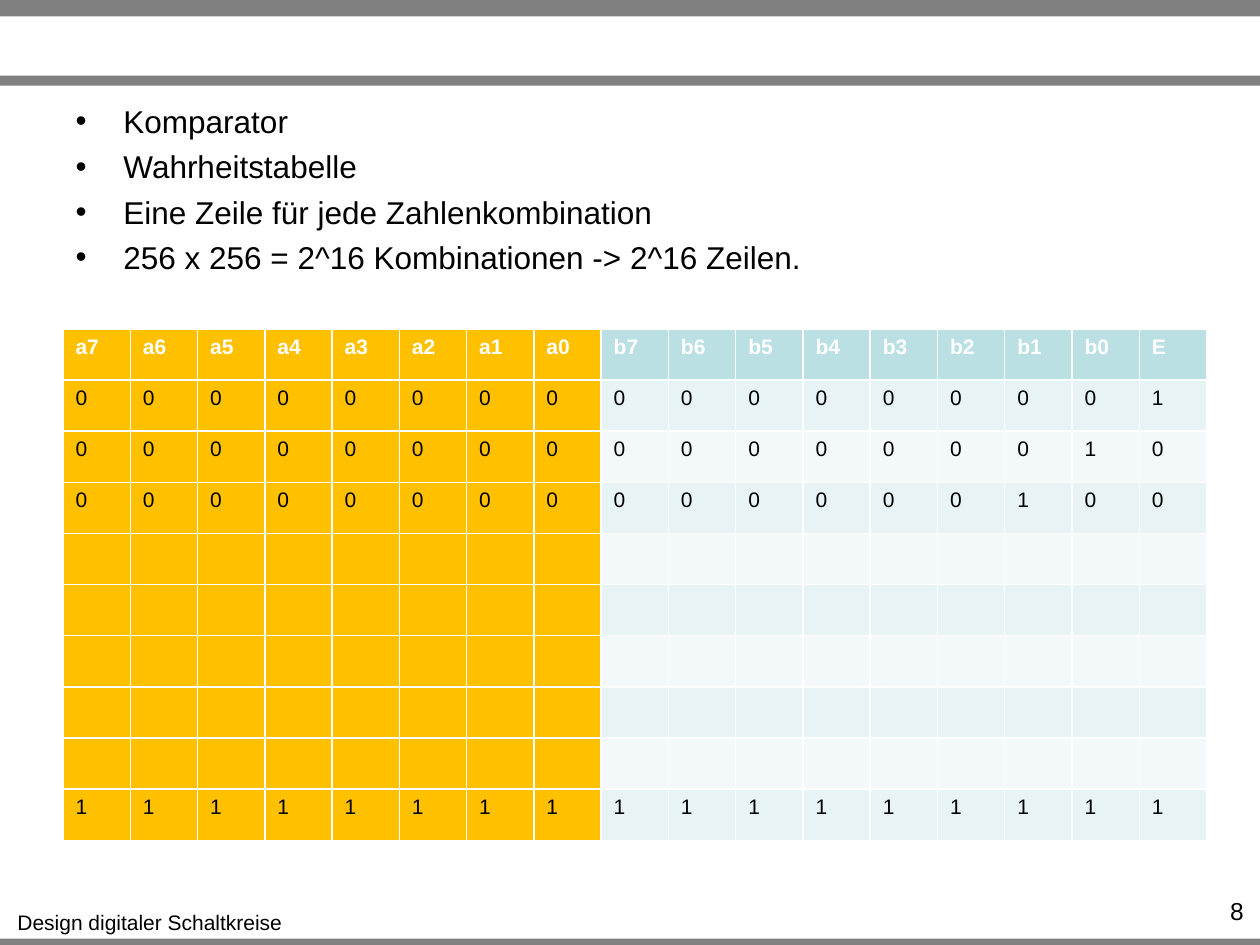
from lxml.etree import SubElement
from pptx import Presentation
from pptx.dml.color import RGBColor
from pptx.enum.shapes import MSO_SHAPE
from pptx.enum.text import MSO_ANCHOR, MSO_AUTO_SIZE, PP_ALIGN
from pptx.oxml.ns import qn
from pptx.util import Inches, Pt

COLORS = {
    "bar": "808080",
    "text": "000000",
    "header_text": "FFFFFF",
    "a_bits": "FFC000",
    "b_header": "BBE0E3",
    "odd_row": "E7F3F4",
    "even_row": "F3F9FA",
}
TOPICS = [
    "Komparator",
    "Wahrheitstabelle",
    "Eine Zeile für jede Zahlenkombination",
    "256 x 256 = 2^16 Kombinationen -> 2^16 Zeilen.",
]
BITS = 8
HEADER = [f"{number}{bit}" for number in "ab" for bit in reversed(range(BITS))] + ["E"]
# Bits of a and b followed by the output E; None leaves a row open
TRUTH_ROWS = [
    "00000000" "00000000" "1",
    "00000000" "00000001" "0",
    "00000000" "00000010" "0",
    *[None] * 5,
    "11111111" "11111111" "1",
]


def rgb(name):
    return RGBColor.from_string(COLORS[name])


def write(paragraph, text, size=12, color="text", bold=False, align=PP_ALIGN.LEFT, before=0):
    paragraph.text = text
    paragraph.alignment = align
    paragraph.space_before = Pt(before)
    font = paragraph.runs[0].font
    font.name = "Arial"
    font.size = Pt(size)
    font.bold = bold
    font.color.rgb = rgb(color)


def add_bar(slide, top, height):
    bar = slide.shapes.add_shape(
        MSO_SHAPE.RECTANGLE, 0, Inches(top), Inches(10), Inches(height))
    bar.shadow.inherit = False
    bar.fill.solid()
    bar.fill.fore_color.rgb = rgb("bar")
    bar.line.fill.background()


def add_label(slide, text, left, top, width, height, wrap=True, **text_format):
    label = slide.shapes.add_textbox(
        Inches(left), Inches(top), Inches(width), Inches(height))
    label.text_frame.word_wrap = wrap
    write(label.text_frame.paragraphs[0], text, **text_format)


def add_frame(slide):
    for top, height in [(7.45, 0.08), (0, 0.13), (0.6, 0.08)]:
        add_bar(slide, top, height)
    add_label(slide, "Design digitaler Schaltkreise", 0.03, 7.17, 2.32, 0.3,
              wrap=False, align=PP_ALIGN.CENTER)
    add_label(slide, "8", 9.1, 7.06, 0.87, 0.24, size=14, align=PP_ALIGN.RIGHT)


def fill_topics(body, left, top, width, height):
    body.left, body.top = Inches(left), Inches(top)
    body.width, body.height = Inches(width), Inches(height)
    frame = body.text_frame
    frame.auto_size = MSO_AUTO_SIZE.NONE
    frame.vertical_anchor = MSO_ANCHOR.TOP
    for index, topic in enumerate(TOPICS):
        paragraph = frame.add_paragraph() if index else frame.paragraphs[0]
        properties = paragraph._p.get_or_add_pPr()
        properties.set("marL", str(Inches(0.38)))
        properties.set("indent", str(-Inches(0.38)))
        SubElement(properties, qn("a:buFont"), typeface="Arial")
        SubElement(properties, qn("a:buChar"), char="•")
        write(paragraph, topic, size=18, before=4.3 if index else 0)


def cell_color(row, column):
    if column < BITS:
        return "a_bits"
    if row == 0:
        return "b_header"
    return "odd_row" if row % 2 else "even_row"


def add_truth_table(slide, left, top, width, height):
    rows = [HEADER] + [bits or [""] * len(HEADER) for bits in TRUTH_ROWS]
    # The default table style supplies the white grid lines
    table = slide.shapes.add_table(
        len(rows), len(HEADER), Inches(left), Inches(top),
        Inches(width), Inches(height)).table
    for r, values in enumerate(rows):
        for c, value in enumerate(values):
            cell = table.cell(r, c)
            cell.fill.solid()
            cell.fill.fore_color.rgb = rgb(cell_color(r, c))
            if value:
                write(cell.text_frame.paragraphs[0], value, bold=r == 0,
                      color="text" if r else "header_text")


def main():
    presentation = Presentation()
    presentation.slide_width = Inches(10)
    presentation.slide_height = Inches(7.5)
    slide = presentation.slides.add_slide(presentation.slide_layouts[1])

    # The heading band stays empty
    title = slide.shapes.title._element
    title.getparent().remove(title)

    add_frame(slide)
    fill_topics(slide.placeholders[1], 0.5, 0.76, 9, 1.24)
    add_truth_table(slide, 0.5, 2.61, 9.08, 4.06)
    presentation.save("out.pptx")


if __name__ == "__main__":
    main()
